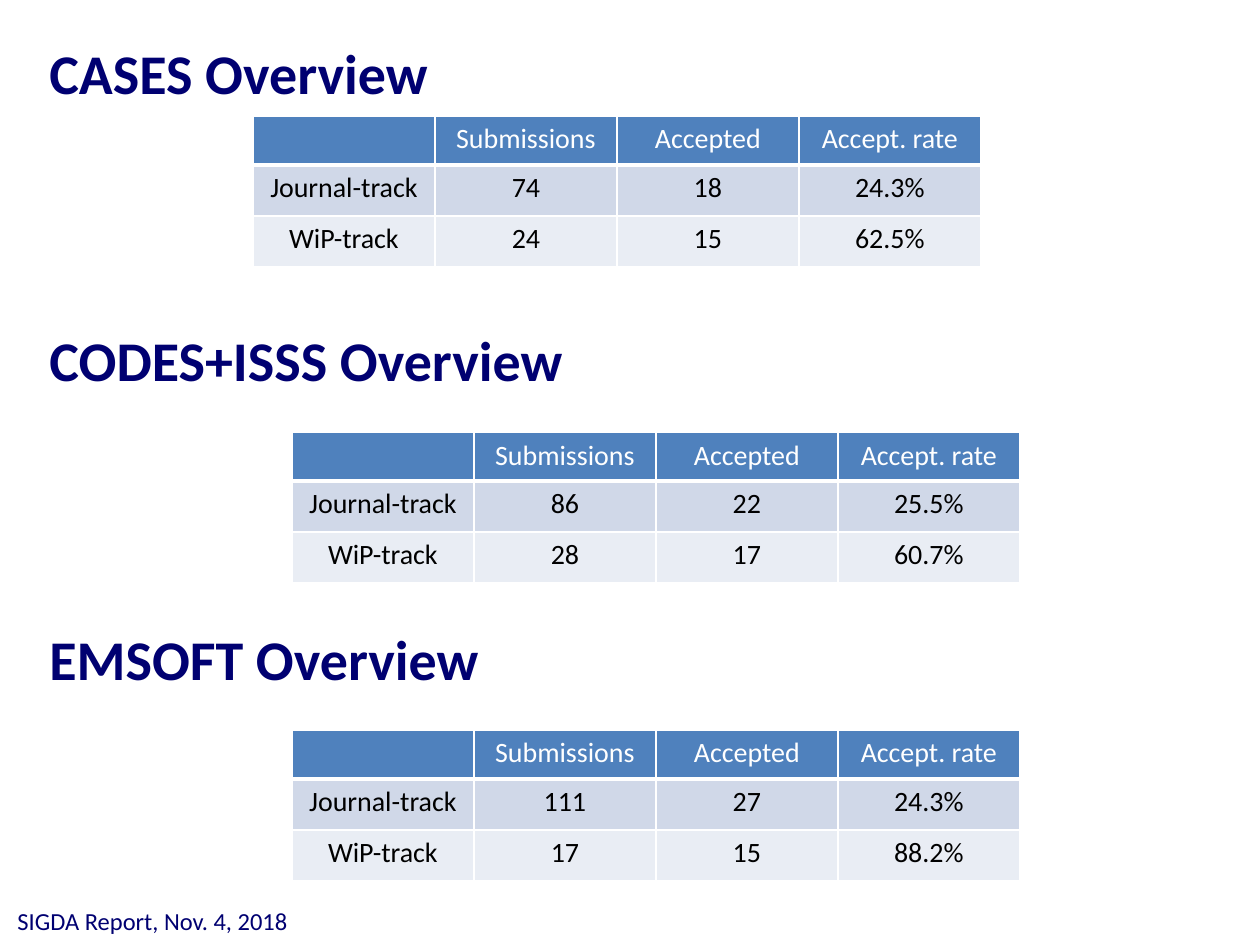
from lxml import etree
from pptx import Presentation
from pptx.dml.color import RGBColor
from pptx.enum.text import MSO_ANCHOR, PP_ALIGN
from pptx.oxml.ns import qn
from pptx.util import Pt

MIDDLE = MSO_ANCHOR.MIDDLE
TOP = MSO_ANCHOR.TOP
CENTER = PP_ALIGN.CENTER
NAVY = RGBColor(0x00, 0x00, 0x71)
WHITE = RGBColor(0xFF, 0xFF, 0xFF)
BLACK = RGBColor(0x00, 0x00, 0x00)
BLUE = RGBColor(0x4F, 0x81, 0xBD)
BAND_DARK = RGBColor(0xD0, 0xD8, 0xE8)
BAND_LIGHT = RGBColor(0xE9, 0xED, 0xF4)
SCALE = 914400 / 126

COLUMN_WIDTH = 182
ROW_HEIGHTS = [49, 51, 51]
ROW_FILLS = [BLUE, BAND_DARK, BAND_LIGHT]
HEADER = ["", "Submissions", "Accepted", "Accept. rate"]

CONFERENCES = [
    ("CASES Overview", 0, 253, 116,
     ["Journal-track", "74", "18", "24.3%"], ["WiP-track", "24", "15", "62.5%"]),
    ("CODES+ISSS Overview", 287, 292, 432,
     ["Journal-track", "86", "22", "25.5%"], ["WiP-track", "28", "17", "60.7%"]),
    ("EMSOFT Overview", 586, 292, 730,
     ["Journal-track", "111", "27", "24.3%"], ["WiP-track", "17", "15", "88.2%"]),
]


def px(*lengths):
    return [round(length * SCALE) for length in lengths]


def add_label(text, box, size, bold, anchor):
    frame = slide.shapes.add_textbox(*px(*box)).text_frame
    frame.word_wrap = True
    frame.vertical_anchor = anchor
    run = frame.paragraphs[0].add_run()
    run.text = text
    run.font.name = "Calibri"
    run.font.size = Pt(size)
    run.font.bold = bold
    run.font.color.rgb = NAVY


deck = Presentation()
deck.slide_width, deck.slide_height = px(1260, 945)
slide = deck.slides.add_slide(deck.slide_layouts[6])

add_label("SIGDA Report, Nov. 4, 2018", (5, 900, 525, 43), 14, False, TOP)

for title, title_top, left, top, journal, wip in CONFERENCES:
    add_label(title, (37, title_top, 1060, 145), 32, True, MIDDLE)

    rows = [HEADER, journal, wip]
    results = slide.shapes.add_table(
        len(rows), len(HEADER),
        *px(left, top, COLUMN_WIDTH * len(HEADER), sum(ROW_HEIGHTS))).table
    for column in results.columns:
        column.width = px(COLUMN_WIDTH)[0]

    for r, values in enumerate(rows):
        results.rows[r].height = px(ROW_HEIGHTS[r])[0]
        for c, value in enumerate(values):
            cell = results.cell(r, c)
            cell.margin_bottom = 0
            properties = cell._tc.get_or_add_tcPr()
            for side in ("lnL", "lnR", "lnT", "lnB"):
                width = Pt(3) if r == 0 and side == "lnB" else Pt(1)
                border = etree.SubElement(properties, qn(f"a:{side}"), w=str(width))
                paint = etree.SubElement(border, qn("a:solidFill"))
                etree.SubElement(paint, qn("a:srgbClr"), val=str(WHITE))
            cell.fill.solid()
            cell.fill.fore_color.rgb = ROW_FILLS[r]
            if value:
                paragraph = cell.text_frame.paragraphs[0]
                paragraph.alignment = CENTER
                run = paragraph.add_run()
                run.text = value
                run.font.name = "Calibri"
                run.font.size = Pt(16)
                run.font.bold = False
                run.font.color.rgb = WHITE if r == 0 else BLACK

deck.save("out.pptx")
